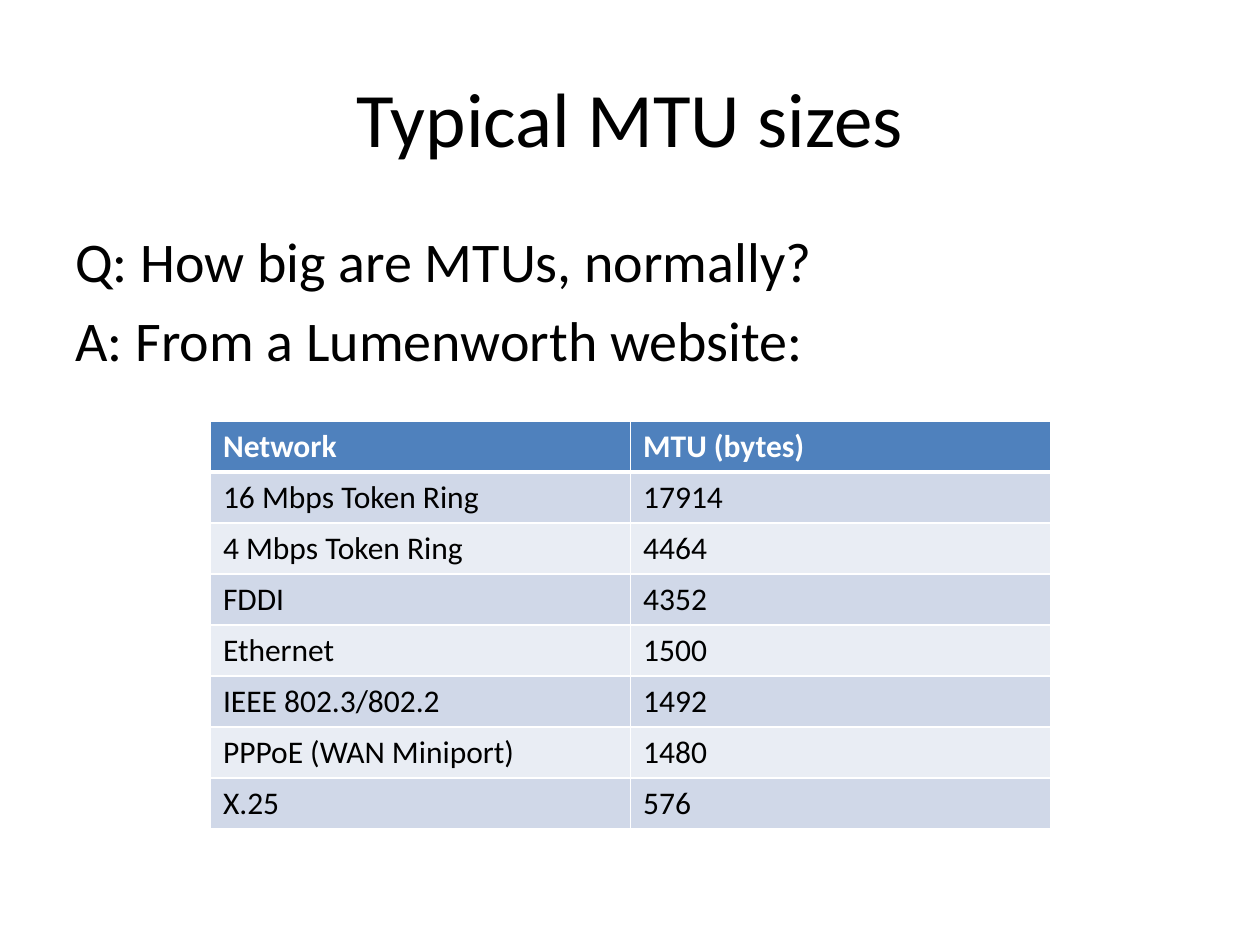
from lxml import etree
from pptx import Presentation
from pptx.dml.color import RGBColor
from pptx.enum.text import MSO_ANCHOR, PP_ALIGN
from pptx.oxml.ns import qn
from pptx.util import Inches, Pt

MIDDLE = MSO_ANCHOR.MIDDLE
CENTER = PP_ALIGN.CENTER
TITLE_ONLY = 5
FONT = "Calibri"
BLACK, WHITE = "000000", "FFFFFF"
HEADER_FILL = "4F81BD"
BAND_FILLS = ("D0D8E8", "E9EDF4")

QUESTION_AND_ANSWER = (
    "Q: How big are MTUs, normally?",
    "A: From a Lumenworth website:",
)
MTU_SIZES = (
    ("Network", "MTU (bytes)"),
    ("16 Mbps Token Ring", "17914"),
    ("4 Mbps Token Ring", "4464"),
    ("FDDI", "4352"),
    ("Ethernet", "1500"),
    ("IEEE 802.3/802.2", "1492"),
    ("PPPoE (WAN Miniport)", "1480"),
    ("X.25", "576"),
)


def rgb(color):
    return RGBColor.from_string(color)


def style(paragraph, size, color=BLACK, bold=False):
    font = paragraph.font
    font.name, font.size, font.bold = FONT, Pt(size), bold
    font.color.rgb = rgb(color)


def add_border(cell, side, width):
    line = etree.SubElement(cell._tc.get_or_add_tcPr(), qn(f"a:ln{side}"), w=str(Pt(width)))
    fill = etree.SubElement(line, qn("a:solidFill"))
    etree.SubElement(fill, qn("a:srgbClr"), val=WHITE)


def place_title(slide, left, top, width, height):
    title = slide.shapes.title
    title.left, title.top, title.width, title.height = left, top, width, height
    title.text_frame.text = "Typical MTU sizes"
    title.text_frame.vertical_anchor = MIDDLE
    heading = title.text_frame.paragraphs[0]
    heading.alignment = CENTER
    style(heading, 44)


def add_question_and_answer(slide, left, top, width, height):
    frame = slide.shapes.add_textbox(left, top, width, height).text_frame
    frame.word_wrap = True
    frame.text = "\n".join(QUESTION_AND_ANSWER)
    for paragraph in frame.paragraphs:
        paragraph.space_before = Pt(6.4)
        style(paragraph, 32)


def add_mtu_table(slide, left, top, width, height):
    row_count = len(MTU_SIZES)
    table = slide.shapes.add_table(row_count, len(MTU_SIZES[0]), left, top, width, height).table
    for row, values in enumerate(MTU_SIZES):
        is_header = row == 0
        fill = HEADER_FILL if is_header else BAND_FILLS[(row - 1) % 2]
        borders = {"L": 1, "R": 1, "T": 3 if row == 1 else 1, "B": 3 if is_header else 1}
        for column, value in enumerate(values):
            cell = table.cell(row, column)
            cell.text = value
            style(cell.text_frame.paragraphs[0], 18, WHITE if is_header else BLACK, is_header)
            for side, line_width in borders.items():
                add_border(cell, side, line_width)
            cell.fill.solid()
            cell.fill.fore_color.rgb = rgb(fill)


def main():
    presentation = Presentation()
    presentation.slide_width, presentation.slide_height = Inches(10), Inches(7.5)
    slide = presentation.slides.add_slide(presentation.slide_layouts[TITLE_ONLY])
    place_title(slide, Inches(0.5), Inches(0.3), Inches(9), Inches(1.25))
    add_question_and_answer(slide, Inches(0.5), Inches(1.75), Inches(9), Inches(4.95))
    add_mtu_table(slide, Inches(1.67), Inches(3.34), Inches(6.67), Inches(3.24))
    presentation.save("out.pptx")


if __name__ == "__main__":
    main()
